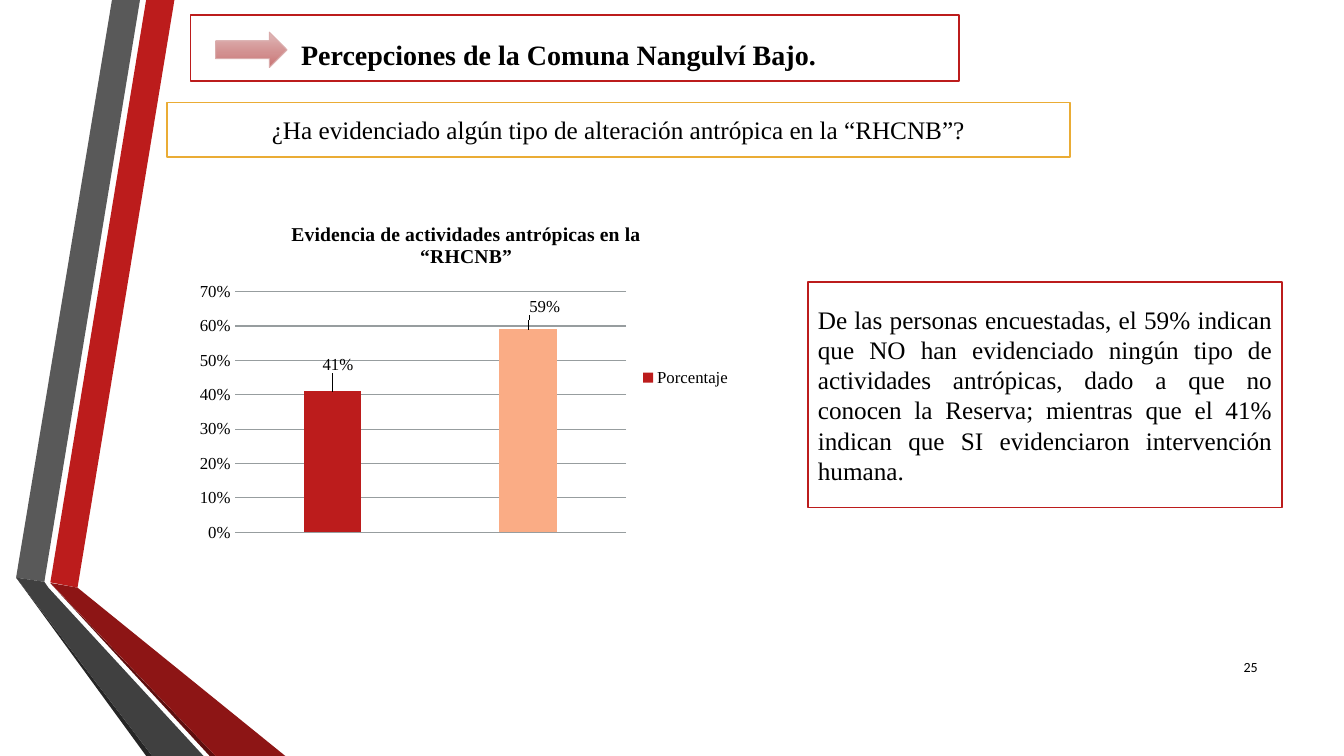
from lxml import etree
from pptx import Presentation
from pptx.chart.data import CategoryChartData
from pptx.dml.color import RGBColor
from pptx.enum.chart import XL_CHART_TYPE, XL_LABEL_POSITION, XL_LEGEND_POSITION, XL_TICK_MARK
from pptx.enum.shapes import MSO_SHAPE
from pptx.enum.text import MSO_ANCHOR, MSO_AUTO_SIZE, PP_ALIGN
from pptx.oxml.ns import qn
from pptx.util import Pt

COLUMN = XL_CHART_TYPE.COLUMN_CLUSTERED
OUTSIDE = XL_LABEL_POSITION.OUTSIDE_END
LEGEND_RIGHT = XL_LEGEND_POSITION.RIGHT
NO_TICK = XL_TICK_MARK.NONE
ARROW = MSO_SHAPE.RIGHT_ARROW
MIDDLE = MSO_ANCHOR.MIDDLE
NO_FIT = MSO_AUTO_SIZE.NONE
LEFT, CENTER, RIGHT, JUSTIFY = PP_ALIGN.LEFT, PP_ALIGN.CENTER, PP_ALIGN.RIGHT, PP_ALIGN.JUSTIFY

BLACK = RGBColor(0x00, 0x00, 0x00)
WHITE = RGBColor(0xFF, 0xFF, 0xFF)
RED = RGBColor(0xBC, 0x1C, 0x1C)
DARK_RED = RGBColor(0x8D, 0x15, 0x15)
DEEP_RED = RGBColor(0x5E, 0x0E, 0x0E)
GRAY = RGBColor(0x59, 0x59, 0x59)
DARK_GRAY = RGBColor(0x40, 0x40, 0x40)
DEEP_GRAY = RGBColor(0x26, 0x26, 0x26)
GOLD = RGBColor(0xEA, 0xAC, 0x35)
PEACH = RGBColor(0xFA, 0xAC, 0x85)
GRID = RGBColor(0x97, 0x9D, 0x9F)
ARROW_TOP = RGBColor(0xDF, 0xB7, 0xB7)
ARROW_BOTTOM = RGBColor(0xC9, 0x75, 0x75)
ARROW_LINE = RGBColor(0xDA, 0xAC, 0xAC)
SERIF = "Times New Roman"

BANDS = [
    (RED, [(36, 416), (55.4, 419.8), (124.6, 0), (104.4, 0)]),
    (GRAY, [(100, 0), (80, 0), (11.5, 412.6), (31.7, 415.6)]),
    (DEEP_GRAY, [(11.5, 412.6), (104.4, 540), (108.7, 540)]),
    (DEEP_RED, [(36, 416.6), (149.8, 540), (154, 540)]),
    (DARK_RED, [(36, 416.4), (154, 540), (203.8, 540), (55.4, 419.8)]),
    (DARK_GRAY, [(145.4, 540), (34.6, 419.8), (31.7, 415.6), (11.5, 412.6), (108.7, 540)]),
]


def style_font(font, size, bold=False, name=SERIF):
    font.size = Pt(size)
    font.bold = bold
    font.name = name
    font.color.rgb = BLACK


def place(shape, box):
    shape.left, shape.top, shape.width, shape.height = map(Pt, box)


def write(shape, text, size, align, bold=False, name=SERIF):
    frame = shape.text_frame
    frame.text = text
    frame.word_wrap = True
    frame.auto_size = NO_FIT
    frame.vertical_anchor = MIDDLE
    para = frame.paragraphs[0]
    para.alignment = align
    para.space_before = Pt(0)
    for span in para.runs:
        style_font(span.font, size, bold, name)


def frame_box(shape, box, color):
    place(shape, box)
    shape.fill.solid()
    shape.fill.fore_color.rgb = WHITE
    shape.line.color.rgb = color
    shape.line.width = Pt(1.25)


def add_bands(page, box):
    left, top = box[:2]
    for color, points in BANDS:
        corners = [(Pt(left + x), Pt(top + y)) for x, y in points]
        builder = page.shapes.build_freeform(*corners[0], scale=1.0)
        builder.add_line_segments(corners[1:], close=True)
        band = builder.convert_to_shape()
        band.shadow.inherit = False
        band.fill.solid()
        band.fill.fore_color.rgb = color
        band.line.fill.background()


def add_heading(page, box):
    left, top = box[:2]
    title = page.shapes.title
    frame_box(title, box, RED)
    write(title, "Percepciones de la Comuna Nangulví Bajo.", 20, LEFT, bold=True)
    title.text_frame.margin_left = Pt(79)
    title.text_frame.margin_top = Pt(13)
    arrow = page.shapes.add_shape(ARROW, Pt(left + 18), Pt(top + 12.3), Pt(51), Pt(25.2))
    arrow.shadow.inherit = False
    arrow.fill.gradient()
    arrow.fill.gradient_angle = 270
    for stop, color, position in zip(arrow.fill.gradient_stops, (ARROW_TOP, ARROW_BOTTOM), (0, 1)):
        stop.color.rgb = color
        stop.position = position
    arrow.line.color.rgb = ARROW_LINE
    arrow.line.width = Pt(0.75)


def add_statement(body, box, text, align, color):
    frame_box(body, box, color)
    write(body, text, 18, align)
    properties = body.text_frame.paragraphs[0]._p.get_or_add_pPr()
    properties.set("marL", "0")
    properties.set("indent", "0")
    etree.SubElement(properties, qn("a:buNone"))


def make_layout(**values):
    layout = etree.Element(qn("c:layout"))
    manual = etree.SubElement(layout, qn("c:manualLayout"))
    for key, value in values.items():
        etree.SubElement(manual, qn("c:" + key)).set("val", str(value))
    return layout


def add_evidence_chart(page, box):
    data = CategoryChartData(number_format="0%")
    data.categories = ["1", "2"]
    data.add_series("Porcentaje", (0.41, 0.59))
    chart = page.shapes.add_chart(COLUMN, *map(Pt, box), data).chart
    style_font(chart.font, 10)
    chart.has_title = True
    chart.chart_title.text_frame.text = "Evidencia de actividades antrópicas en la “RHCNB”"
    style_font(chart.chart_title.text_frame.paragraphs[0].runs[0].font, 14, bold=True)
    chart.has_legend = True
    chart.legend.position = LEGEND_RIGHT
    chart.legend.include_in_layout = False
    style_font(chart.legend.font, 12)
    chart.category_axis.visible = False

    axis = chart.value_axis
    axis.minimum_scale, axis.maximum_scale, axis.major_unit = 0, 0.7, 0.1
    axis.major_tick_mark = NO_TICK
    axis.format.line.fill.background()
    axis.major_gridlines.format.line.color.rgb = GRID
    axis.major_gridlines.format.line.width = Pt(0.75)
    axis.tick_labels.number_format = "0%"
    axis.tick_labels.number_format_is_linked = False
    style_font(axis.tick_labels.font, 12)

    plot = chart.plots[0]
    plot.gap_width = 240
    plot.vary_by_categories = False
    area = chart._chartSpace.chart.plotArea
    for layout in area.findall(qn("c:layout")):
        area.remove(layout)
    area.insert(0, make_layout(layoutTarget="inner", xMode="edge", yMode="edge",
                               x=0.08, y=0.25, w=0.71, h=0.7))

    series = plot.series[0]
    series.format.fill.solid()
    series.format.fill.fore_color.rgb = RED
    labels = series.data_labels
    labels.show_value = True
    labels.number_format = "0%"
    labels.number_format_is_linked = False
    style_font(labels.font, 12)
    for index, (color, x, y) in enumerate([(RED, 0.01, -0.04), (PEACH, 0.03, -0.03)]):
        point = series.points[index]
        point.format.fill.solid()
        point.format.fill.fore_color.rgb = color
        style_font(point.data_label.font, 12)
        point.data_label.position = OUTSIDE
        labels._element.findall(qn("c:dLbl"))[index].insert(1, make_layout(x=x, y=y))


def add_page_number(page, box):
    number = page.shapes.add_textbox(*map(Pt, box))
    write(number, "25", 10, RIGHT, name="Calibri")


def build_survey_page(deck):
    page = deck.slides.add_slide(deck.slide_layouts[3])
    question, finding = list(page.placeholders)[1:3]
    add_bands(page, (0, 0, 204, 540))
    add_heading(page, (136, 10.7, 549, 47.3))
    add_statement(question, (119.3, 73.2, 645, 39),
                  "¿Ha evidenciado algún tipo de alteración antrópica en la “RHCNB”?", CENTER, GOLD)
    add_statement(finding, (577, 201.5, 339, 161),
                  "De las personas encuestadas, el 59% indican que NO han evidenciado ningún tipo de "
                  "actividades antrópicas, dado a que no conocen la Reserva; mientras que el 41% "
                  "indican que SI evidenciaron intervención humana.", JUSTIFY, RED)
    add_evidence_chart(page, (136, 147, 394, 245.5))
    add_page_number(page, (862.5, 462.3, 43, 28.8))


def main():
    deck = Presentation()
    deck.slide_width, deck.slide_height = Pt(960), Pt(540)
    build_survey_page(deck)
    deck.save("out.pptx")


if __name__ == "__main__":
    main()
